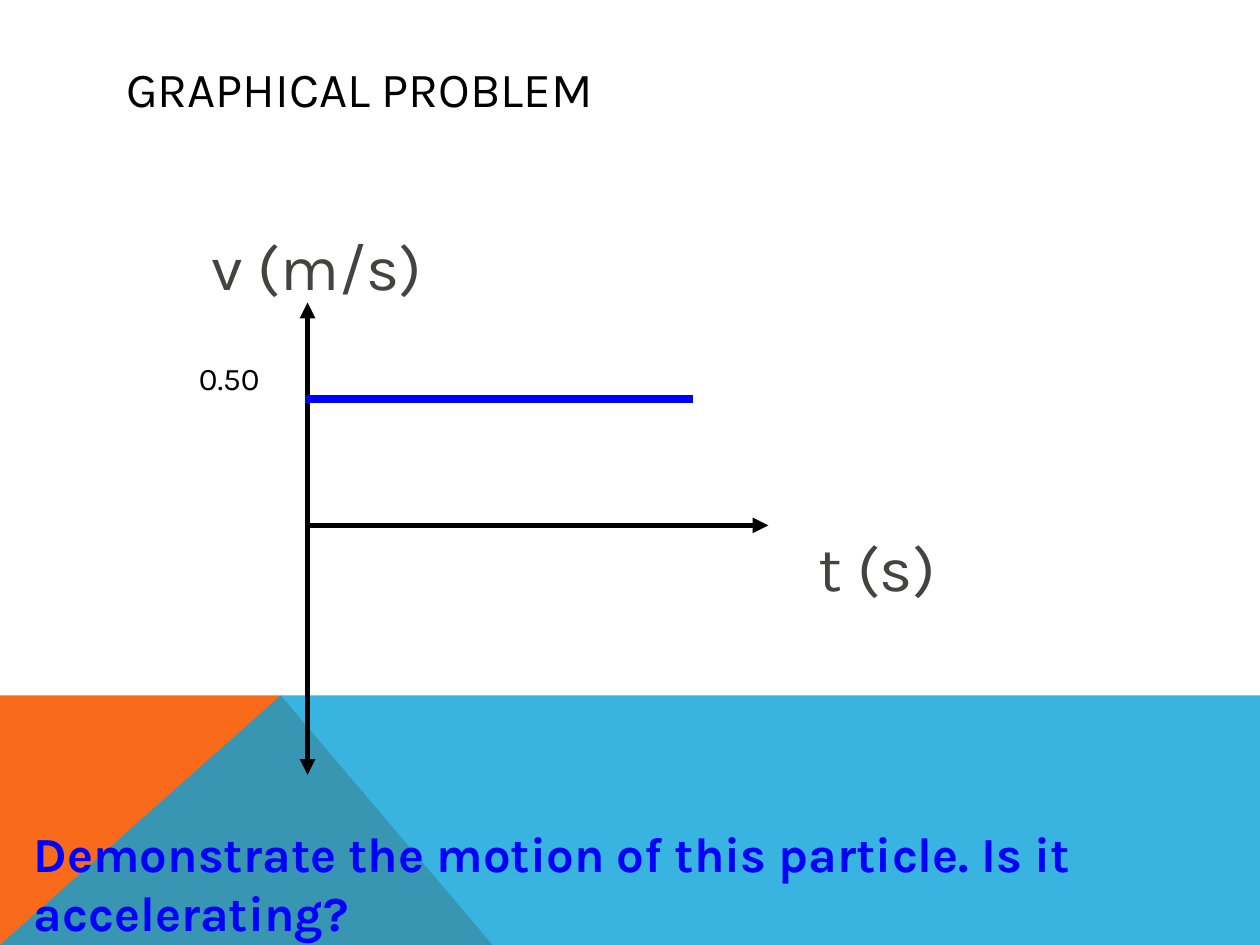
from lxml.etree import SubElement
from pptx import Presentation
from pptx.dml.color import RGBColor
from pptx.enum.shapes import MSO_CONNECTOR
from pptx.enum.text import MSO_ANCHOR, MSO_AUTO_SIZE, PP_ALIGN
from pptx.oxml.ns import qn
from pptx.util import Cm, Pt

THEME = {
    "font": "Karla",
    "black": RGBColor(0, 0, 0),
    "gray": RGBColor(0x43, 0x43, 0x42),
    "blue": RGBColor(0, 0, 0xFF),
    "orange": RGBColor(0xF9, 0x6A, 0x1B),
    "sky": RGBColor(0x08, 0xA1, 0xD9),
    "head": 28,
    "label": 36,
    "tick": 18,
}


def put(shape, box, text, size, color, bold=False, **frame):
    """Place a text shape and write one formatted paragraph in it."""
    for name, value in zip(("left", "top", "width", "height"), box):
        setattr(shape, name, Cm(value))
    body = shape.text_frame
    body.text = text
    for name, value in frame.items():
        setattr(body, name, value)
    para = body.paragraphs[0]
    look = {"alignment": PP_ALIGN.LEFT, "space_before": Pt(0)}
    for name, value in look.items():
        setattr(para, name, value)
    font = para.runs[0].font
    look = {"name": THEME["font"], "size": Pt(THEME[size]), "bold": bold}
    for name, value in look.items():
        setattr(font, name, value)
    font.color.rgb = THEME[color]
    return para


deck = Presentation()
deck.slide_width, deck.slide_height = Cm(25.4), Cm(19.05)
slide = deck.slides.add_slide(deck.slide_layouts[1])
shapes = slide.shapes
title, prompt = slide.placeholders

# Bottom band: an orange corner under a see-through blue slope
top, base, peak = 14.02, 19.05, 5.66
bands = [
    ("orange", 100, [(0, base), (0, top), (peak, top), (9.93, base)]),
    ("sky", 80, [(0, base), (peak, top), (25.4, top), (25.4, base)]),
]
for depth, (color, alpha, points) in enumerate(bands):
    start, *rest = [(Cm(x), Cm(y)) for x, y in points]
    path = shapes.build_freeform(*start)
    path.add_line_segments(rest, close=True)
    band = path.convert_to_shape()
    band.shadow.inherit = False
    band.line.fill.background()
    band.fill.solid()
    band.fill.fore_color.rgb = THEME[color]
    if alpha < 100:
        tint = next(band.element.iter(qn("a:srgbClr")))
        SubElement(tint, qn("a:alpha"), val=str(alpha * 1000))
    title.element.getparent().insert(2 + depth, band.element)

put(title, (2.29, 1.02, 20.88, 1.52), "GRAPHICAL PROBLEM", "head", "black",
    vertical_anchor=MSO_ANCHOR.MIDDLE, auto_size=MSO_AUTO_SIZE.NONE)
para = put(prompt, (0.43, 16.41, 24.97, 2.64),
           "Demonstrate the motion of this particle. Is it accelerating?",
           "head", "blue", True, margin_top=Cm(0.2),
           auto_size=MSO_AUTO_SIZE.NONE)
props = para._p.get_or_add_pPr()
props.set("marL", "0")
props.set("indent", "0")
SubElement(props, qn("a:buNone"))

# Axes and the constant velocity line
zero, mid = 6.2, 10.59
lines = [
    ((zero, 15.62), (zero, 6.1), "black", 3, ("headEnd", "tailEnd")),
    ((zero, mid), (15.49, mid), "black", 3, ("tailEnd",)),
    ((6.15, 8.05), (13.97, 8.05), "blue", 4.5, ()),
]
for start, end, color, width, tips in lines:
    line = shapes.add_connector(
        MSO_CONNECTOR.STRAIGHT, *[Cm(v) for v in start + end])
    line.line.color.rgb = THEME[color]
    line.line.width = Pt(width)
    for tip in tips:
        SubElement(line.line._get_or_add_ln(), qn("a:" + tip), type="triangle")
    SubElement(line.element.spPr, qn("a:effectLst"))

labels = [
    ("t (s)", (16.26, 10.52, 3.02, 1.78), "label", "gray", False, MSO_ANCHOR.BOTTOM),
    ("v (m/s)", (4.01, 4.45, 7.62, 1.78), "label", "gray", True, MSO_ANCHOR.BOTTOM),
    ("0.50", (3.76, 7.11, 2.26, 1.27), "tick", "black", False, MSO_ANCHOR.TOP),
]
for text, box, size, color, wrap, anchor in labels:
    put(shapes.add_textbox(0, 0, 0, 0), box, text, size, color, word_wrap=wrap,
        vertical_anchor=anchor, auto_size=MSO_AUTO_SIZE.SHAPE_TO_FIT_TEXT)

deck.save("out.pptx")
